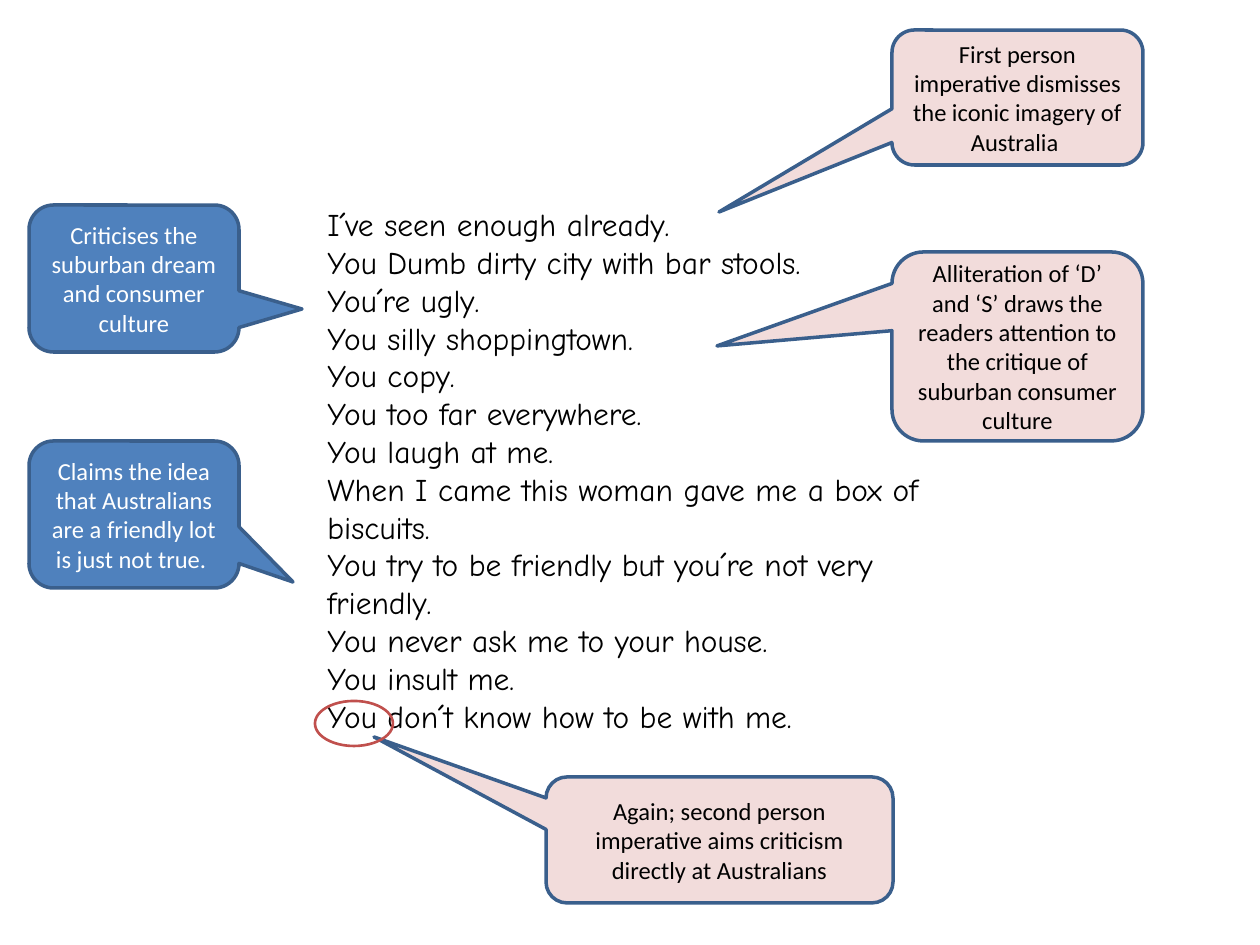
from typing import NamedTuple

from pptx import Presentation
from pptx.dml.color import RGBColor
from pptx.enum.shapes import MSO_SHAPE
from pptx.enum.text import MSO_ANCHOR, PP_ALIGN
from pptx.util import Pt

SCALE = 914400 / 126  # EMU in one px
BLUE, PINK, EDGE, RED = "4F81BD", "F2DCDB", "3A5F8C", "C0504D"
WHITE, BLACK = "FFFFFF", "000000"

POEM = [
    "I´ve seen enough already.",
    "You Dumb dirty city with bar stools.",
    "You´re ugly.",
    "You silly shoppingtown.",
    "You copy.",
    "You too far everywhere.",
    "You laugh at me.",
    "When I came this woman gave me a box of biscuits.",
    "You try to be friendly but you´re not very friendly.",
    "You never ask me to your house.",
    "You insult me.",
    "You don´t know how to be with me.",
]


class Box(NamedTuple):
    left: int
    top: int
    width: int
    height: int


class Note(NamedTuple):
    box: Box
    tip: tuple[int, int]
    fill: str
    ink: str
    text: str


NOTES = [
    Note(Box(29, 205, 210, 147), (302, 309), BLUE, WHITE,
         "Criticises the suburban dream and consumer culture"),
    Note(Box(29, 441, 210, 147), (293, 582), BLUE, WHITE,
         "Claims the idea that Australians are a friendly lot is just not true. "),
    Note(Box(892, 30, 251, 135), (719, 212), PINK, BLACK,
         "First person imperative dismisses the iconic imagery of Australia "),
    Note(Box(892, 252, 251, 189), (717, 346), PINK, BLACK,
         "Alliteration of ‘D’ and ‘S’ draws the readers attention to the "
         "critique of suburban consumer culture"),
    Note(Box(546, 777, 347, 126), (374, 737), PINK, BLACK,
         "Again; second person imperative aims criticism directly at Australians"),
]


def px(count: int) -> int:
    return round(count * SCALE)


def place(box: Box) -> list[int]:
    return [px(side) for side in box]


def color(code: str) -> RGBColor:
    return RGBColor.from_string(code)


def style(frame, font: str, size: int, ink: str) -> None:
    for para in frame.paragraphs:
        for run in para.runs:
            run.font.name = font
            run.font.size = Pt(size)
            run.font.color.rgb = color(ink)


def draw_poem(slide, box: Box) -> None:
    frame = slide.shapes.add_textbox(*place(box)).text_frame
    frame.word_wrap = True
    frame.text = "\n".join(POEM)
    style(frame, "Comic Neue", 18, BLACK)


def draw_note(slide, note: Note) -> None:
    """Draw a callout; its tip is set as an offset from the centre."""
    box = note.box
    shape = slide.shapes.add_shape(
        MSO_SHAPE.ROUNDED_RECTANGULAR_CALLOUT, *place(box))
    shape.adjustments[0] = (note.tip[0] - box.left) / box.width - 0.5
    shape.adjustments[1] = (note.tip[1] - box.top) / box.height - 0.5
    shape.shadow.inherit = False
    shape.fill.solid()
    shape.fill.fore_color.rgb = color(note.fill)
    shape.line.color.rgb = color(EDGE)
    shape.line.width = Pt(2)
    frame = shape.text_frame
    frame.word_wrap = True
    frame.vertical_anchor = MSO_ANCHOR.MIDDLE
    frame.text = note.text
    frame.paragraphs[0].alignment = PP_ALIGN.CENTER
    style(frame, "Calibri", 14, note.ink)


def draw_ring(slide, box: Box) -> None:
    ring = slide.shapes.add_shape(MSO_SHAPE.OVAL, *place(box))
    ring.shadow.inherit = False
    ring.fill.background()
    ring.line.color.rgb = color(RED)
    ring.line.width = Pt(1.5)


def main() -> None:
    deck = Presentation()
    deck.slide_width, deck.slide_height = px(1260), px(945)
    slide = deck.slides.add_slide(deck.slide_layouts[6])
    draw_poem(slide, Box(315, 199, 630, 547))
    for note in NOTES:
        draw_note(slide, note)
    draw_ring(slide, Box(315, 701, 78, 45))
    deck.save("out.pptx")


if __name__ == "__main__":
    main()
